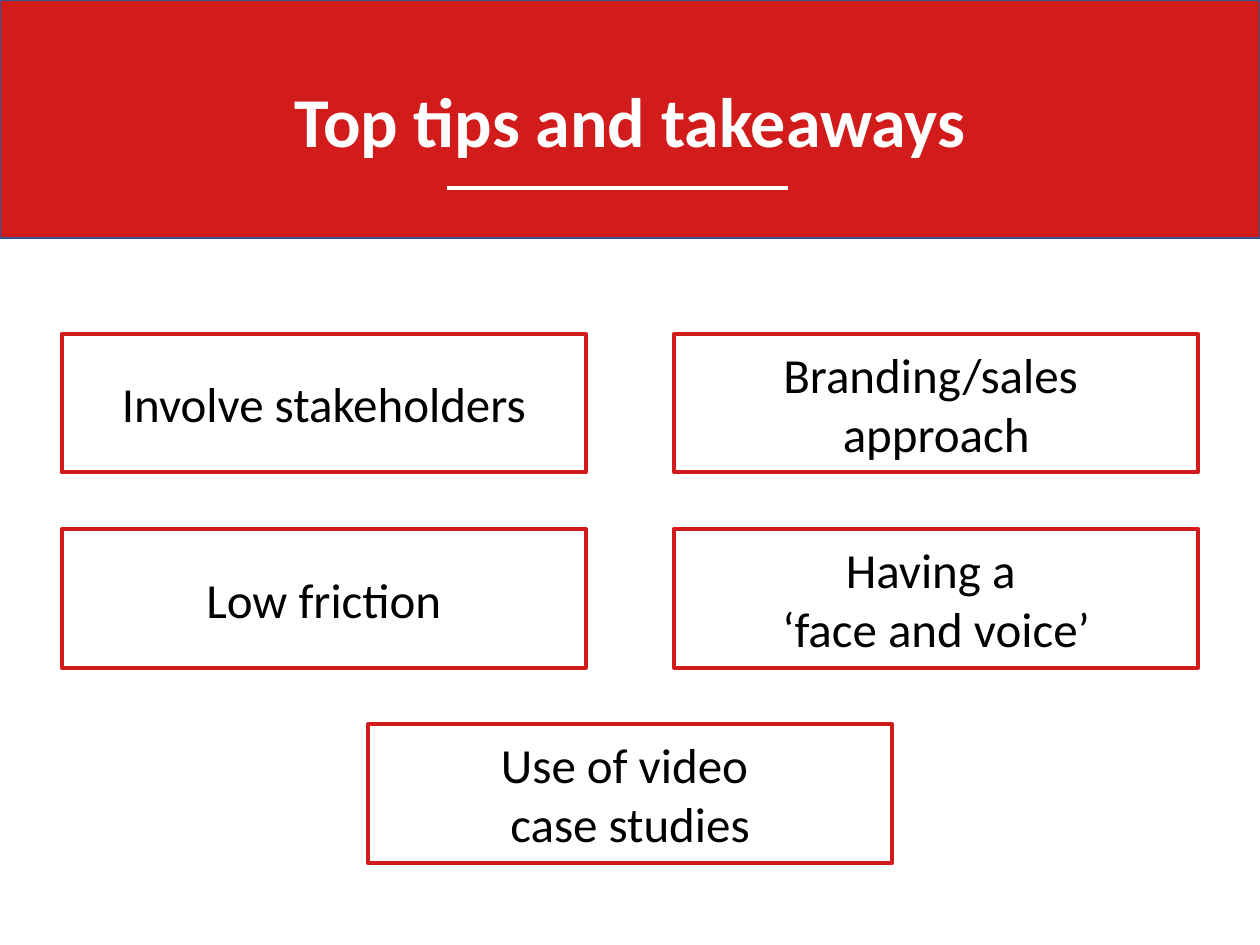
from dataclasses import dataclass

from lxml import etree
from pptx import Presentation, util as u
from pptx.dml.color import RGBColor
from pptx.enum import shapes, text
from pptx.oxml import ns


@dataclass(frozen=True)
class Theme:
    """Colours, font and type sizes of the slide."""
    red: str = "D21C1C"
    blue: str = "325491"
    white: str = "FFFFFF"
    black: str = "000000"
    font: str = "Calibri"
    title_size: float = 40
    tip_size: float = 28
    border: float = 2.25
    thin: float = 1


THEME = Theme()
SLIDE_W, SLIDE_H = 10, 7.5
BOX_W, BOX_H = 4.16, 1.1
CENTRE_LEFT = (SLIDE_W - BOX_W) / 2
COLUMN_SHIFT = 2.43
FIRST_TOP, ROW_STEP = 2.65, 1.55

TIPS = [
    (-1, 0, "Involve stakeholders"),
    (1, 0, "Branding/sales \napproach"),
    (-1, 1, "Low friction"),
    (1, 1, "Having a \n‘face and voice’"),
    (0, 2, "Use of video \ncase studies"),
]


def rgb(value):
    """Return a colour from its hex digits."""
    return RGBColor.from_string(value)


def add_box(s, left, top, width, height, fill, line, line_width):
    """Add a filled and outlined rectangle without shadow."""
    sp = s.shapes.add_shape(shapes.MSO_SHAPE.RECTANGLE, u.Inches(left),
                            u.Inches(top), u.Inches(width), u.Inches(height))
    sp.shadow.inherit = False
    sp.fill.solid()
    sp.fill.fore_color.rgb = rgb(fill)
    sp.line.color.rgb = rgb(line)
    sp.line.width = u.Pt(line_width)
    return sp


def set_text(sp, content, size, color, bold=False):
    """Write centred text, one paragraph per line of content."""
    tf = sp.text_frame
    tf.word_wrap = True
    tf.vertical_anchor = text.MSO_ANCHOR.MIDDLE
    tf.text = content
    for p in tf.paragraphs:
        p.alignment = text.PP_ALIGN.CENTER
        p.font.name = THEME.font
        p.font.size = u.Pt(size)
        p.font.bold = bold
        p.font.color.rgb = rgb(color)


def add_rule(s, left, right, y):
    """Add the horizontal white line under the title."""
    line = s.shapes.add_connector(shapes.MSO_CONNECTOR.STRAIGHT, u.Inches(left),
                                  u.Inches(y), u.Inches(right), u.Inches(y))
    line.line.color.rgb = rgb(THEME.white)
    line.line.width = u.Pt(THEME.border)
    etree.SubElement(line._element.spPr, ns.qn("a:effectLst"))


def add_banner(s, title):
    """Add the red title band across the top."""
    sp = add_box(s, 0, 0, SLIDE_W, 1.89, THEME.red, THEME.blue, THEME.thin)
    set_text(sp, title, THEME.title_size, THEME.white, bold=True)
    add_rule(s, 3.55, 6.25, 1.49)


def add_tip(s, side, row, content):
    """Add a tip box at a side of the centre line and a row."""
    sp = add_box(s, CENTRE_LEFT + side * COLUMN_SHIFT, FIRST_TOP + row * ROW_STEP,
                 BOX_W, BOX_H, THEME.white, THEME.red, THEME.border)
    set_text(sp, content, THEME.tip_size, THEME.black)


def main():
    """Build and save the slide."""
    prs = Presentation()
    prs.slide_width, prs.slide_height = u.Inches(SLIDE_W), u.Inches(SLIDE_H)
    s = prs.slides.add_slide(prs.slide_layouts[6])
    add_banner(s, "Top tips and takeaways")
    for side, row, content in TIPS:
        add_tip(s, side, row, content)
    prs.save("out.pptx")


if __name__ == "__main__":
    main()
